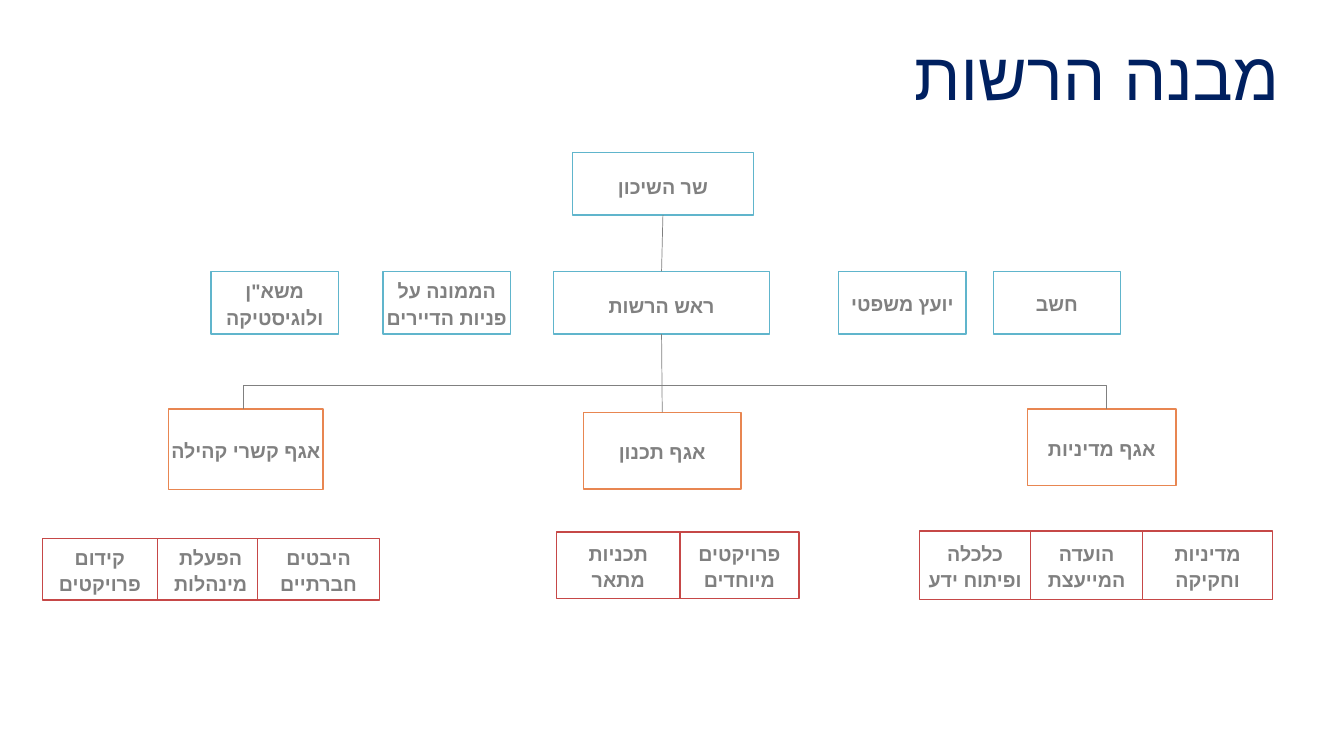
from lxml.etree import SubElement
from pptx import Presentation
from pptx.dml.color import RGBColor
from pptx.enum.shapes import MSO_CONNECTOR, MSO_SHAPE
from pptx.enum.text import MSO_ANCHOR, MSO_AUTO_SIZE, PP_ALIGN
from pptx.oxml.ns import qn
from pptx.util import Inches, Pt

WIDTH, HEIGHT = Inches(13.33), Inches(7.5)
COLUMN, ROW = WIDTH / 100, HEIGHT / 100

WHITE = RGBColor(0xFF, 0xFF, 0xFF)
NAVY = RGBColor(0x00, 0x20, 0x60)
GRAY = RGBColor(0x80, 0x80, 0x80)
TEAL = RGBColor(0x60, 0xB5, 0xCC)
ORANGE = RGBColor(0xE8, 0x86, 0x51)
RED = RGBColor(0xC6, 0x48, 0x47)

TITLE_FONT = {"name": "Arial", "size": Pt(48), "bold": False}
LABEL_FONT = {"name": "Arial", "size": Pt(14), "bold": True}
TITLE_FRAME = {"word_wrap": True, "vertical_anchor": MSO_ANCHOR.TOP,
               "auto_size": MSO_AUTO_SIZE.SHAPE_TO_FIT_TEXT}
LABEL_FRAME = {"word_wrap": True, "vertical_anchor": MSO_ANCHOR.MIDDLE,
               "margin_left": 0, "margin_right": 0,
               "margin_top": Inches(0.07), "margin_bottom": Inches(0.07)}
TITLE_PARAGRAPH = {"alignment": PP_ALIGN.RIGHT}
LABEL_PARAGRAPH = {"alignment": PP_ALIGN.CENTER, "line_spacing": Pt(18.7)}
LEADER_PARAGRAPH = {"alignment": PP_ALIGN.CENTER, "line_spacing": Pt(21.3)}

STAFF = [('משא"ן ולוגיסטיקה', 0), ("הממונה על פניות הדיירים", 12.8),
         ("יועץ משפטי", 46.7), ("חשב", 58.2)]

COMMUNITY = ("אגף קשרי קהילה", (12.55, 54.1, 11.5, 10.7), (3.15, 71.2, 25.1, 8.15),
             [("הפעלת מינהלות", 8.25, 8.55), ("היבטים חברתיים", 16, 9.1),
              ("קידום פרויקטים", 0, 8.55)])
PLANNING = ("אגף תכנון", (43.4, 54.55, 11.75, 10.15), (41.4, 70.4, 18.05, 8.8),
            [("תכניות\vמתאר", 0, 9.2), ("פרויקטים מיוחדים", 9.2, 8.85)])
POLICY = ("אגף מדיניות", (76.45, 54.1, 11.05, 10.15), (68.4, 70.25, 26.3, 9.05),
          [("כלכלה\vופיתוח ידע", 0, 8.3), ("הועדה\vהמייעצת", 8.3, 8.3),
           ("מדיניות וחקיקה", 16.6, 9.7)])


def apply_format(target, values):
    """Set every attribute named in the dict of format values."""
    for attribute, value in values.items():
        setattr(target, attribute, value)


def grid_box(left, top, width, height):
    """Turn columns and rows into slide lengths."""
    return int(left * COLUMN), int(top * ROW), int(width * COLUMN), int(height * ROW)


def write_text(frame, text, frame_format, paragraph_format, font, color, rtl):
    """Fill a text frame with one formatted Hebrew paragraph."""
    apply_format(frame, frame_format)
    frame.text = text
    paragraph = frame.paragraphs[0]
    apply_format(paragraph, paragraph_format)
    if rtl:
        paragraph._p.get_or_add_pPr().set("rtl", "1")
    for run in paragraph.runs:
        apply_format(run.font, font)
        run.font.color.rgb = color
        SubElement(run._r.get_or_add_rPr(), qn("a:cs")).set("typeface", font["name"])


def draw_title(slide, box):
    """Place the title placeholder."""
    title = slide.shapes.title
    title.left, title.top, title.width, title.height = grid_box(*box)
    write_text(title.text_frame, "מבנה הרשות", TITLE_FRAME, TITLE_PARAGRAPH,
               TITLE_FONT, NAVY, True)


def draw_post(slide, box, text, outline, leader=False):
    """Draw one outlined box of the chart."""
    post = slide.shapes.add_shape(MSO_SHAPE.RECTANGLE, *grid_box(*box))
    post.shadow.inherit = False
    post.fill.solid()
    post.fill.fore_color.rgb = WHITE
    post.line.color.rgb = outline
    post.line.width = Pt(1)
    write_text(post.text_frame, text, LABEL_FRAME,
               LEADER_PARAGRAPH if leader else LABEL_PARAGRAPH,
               LABEL_FONT, GRAY, leader)
    return post


def draw_staff(slide, box):
    """Draw the staff posts beside the head of the authority."""
    left, top, width, height = box
    for text, offset in STAFF:
        draw_post(slide, (left + offset, top, 0.14 * width, height), text, TEAL)


def draw_department(slide, text, box, units_box, units):
    """Draw a department and the row of units under it."""
    department = draw_post(slide, box, text, ORANGE)
    left, top, _, height = units_box
    for unit, offset, width in units:
        draw_post(slide, (left + offset, top, width, height), unit, RED)
    return department


def draw_line(slide, kind, start=(0, 0), end=(0, 0)):
    """Draw a thin gray connector between two grid points."""
    points = [int(length) for column, row in (start, end)
              for length in (column * COLUMN, row * ROW)]
    line = slide.shapes.add_connector(kind, *points)
    line.line.color.rgb = GRAY
    line.line.width = Pt(0.5)
    SubElement(line._element.spPr, qn("a:effectLst"))
    return line


def join_posts(slide, upper, lower):
    """Join the bottom of one post to the top of another."""
    line = draw_line(slide, MSO_CONNECTOR.STRAIGHT)
    line.begin_connect(upper, 2)
    line.end_connect(lower, 0)


def draw_branches(slide, box):
    """Draw the rail that drops to the two outer departments."""
    left, top, width, height = box
    for start, end in ((0.75, 0), (0.5, 1)):
        branch = draw_line(slide, MSO_CONNECTOR.ELBOW, (left + start * width, top),
                           (left + end * width, top + height))
        branch._element.spPr.find(qn("a:prstGeom")).set("prst", "bentConnector2")


def draw_structure(slide):
    """Draw the organisation chart from the minister down to the units."""
    minister = draw_post(slide, (42.6, 20.15, 13.45, 8.3), "שר השיכון", TEAL, True)
    head = draw_post(slide, (41.2, 35.9, 16.05, 8.3), "ראש הרשות", TEAL, True)
    draw_staff(slide, (15.7, 35.9, 67.65, 8.3))
    _, planning, _ = [draw_department(slide, *branch)
                      for branch in (COMMUNITY, PLANNING, POLICY)]
    join_posts(slide, minister, head)
    join_posts(slide, head, planning)
    draw_branches(slide, (18.1, 50.95, 64.2, 3.15))


def main():
    """Build and save the slide."""
    deck = Presentation()
    deck.slide_width, deck.slide_height = WIDTH, HEIGHT
    slide = deck.slides.add_slide(deck.slide_layouts[5])
    draw_title(slide, (12.75, 3.75, 83.2, 12.15))
    draw_structure(slide)
    deck.save("out.pptx")


if __name__ == "__main__":
    main()
